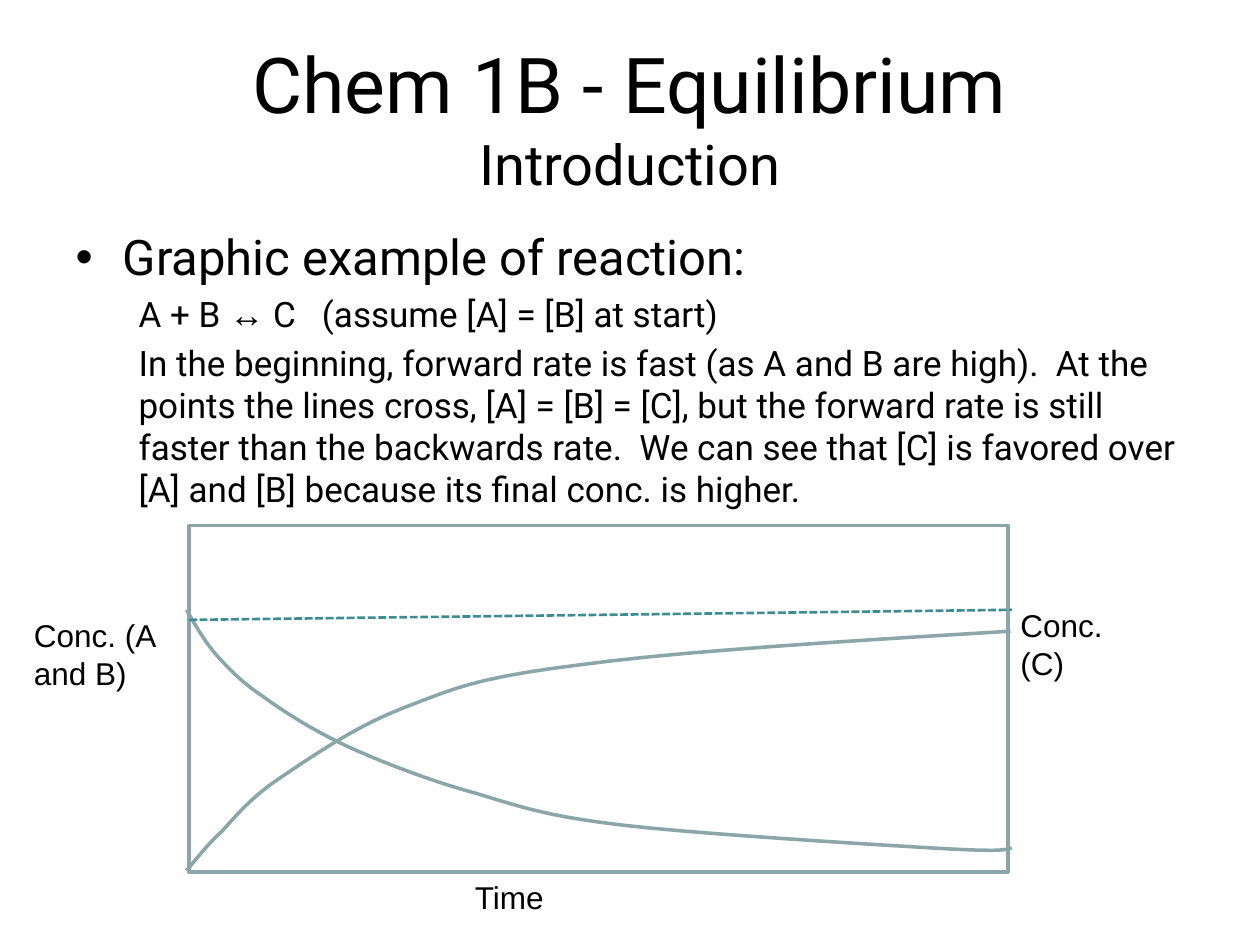
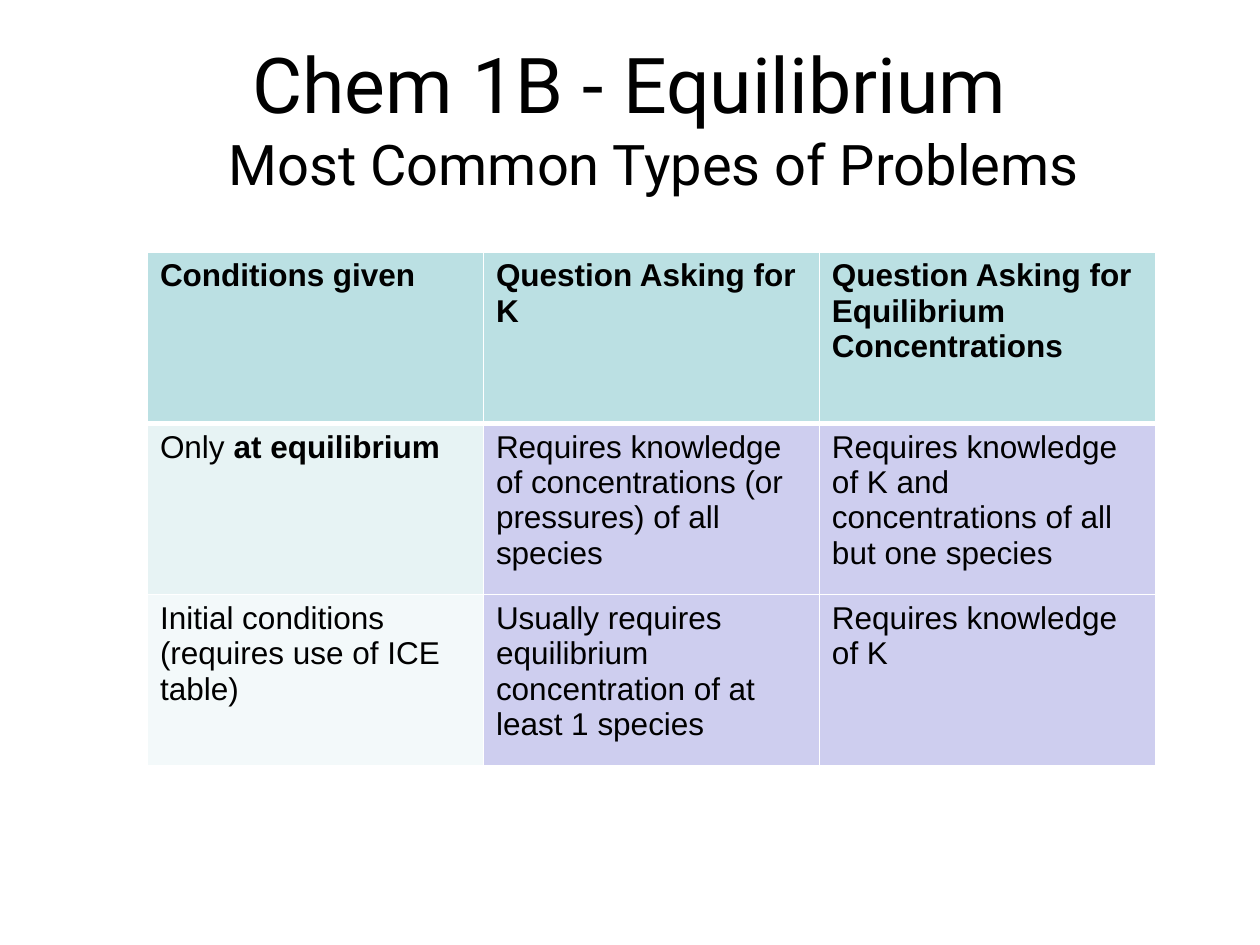
import itertools

import pptx
import pptx.dml.color
import pptx.enum.dml
import pptx.enum.shapes
import pptx.enum.text
import pptx.oxml.ns
import pptx.util
from lxml import etree
from pptx.util import Inches

qn = pptx.oxml.ns.qn


def color(code):
    return pptx.dml.color.RGBColor.from_string(code)


def box(*sides):
    return [Inches(side) for side in sides]


def blend(start, first, second, end, steps=10):
    """Points along one cubic curve, without its start."""
    for step in range(1, steps + 1):
        t = step / steps
        parts = ((1 - t) ** 3, 3 * t * (1 - t) ** 2, 3 * t * t * (1 - t), t ** 3)
        yield tuple(sum(part * point[axis] for part, point in
                        zip(parts, (start, first, second, end))) for axis in (0, 1))


class Deck:
    HEAD, TEXT = "Roboto", "Arial"
    INK, CURVE, LIMIT, WHITE = "000000", "8AA6A8", "3C8C93", "FFFFFF"

    def __init__(self):
        self.file = pptx.Presentation()
        self.file.slide_width, self.file.slide_height = box(10, 7.5)
        self.slide = None

    def font(self, run, size, name, bold=None):
        run.font.size = pptx.util.Pt(size)
        run.font.name = name
        run.font.bold = bold
        run.font.color.rgb = color(self.INK)

    def place(self, shape, *sides):
        shape.left, shape.top, shape.width, shape.height = box(*sides)
        frame = shape.text_frame
        frame.word_wrap = True
        frame.auto_size = pptx.enum.text.MSO_AUTO_SIZE.NONE
        return frame

    def indent(self, para, left, first):
        props = para._p.get_or_add_pPr()
        props.set("marL", str(Inches(left)))
        props.set("indent", str(Inches(first)))
        return props

    def page(self, topic, layout, hang=False):
        self.slide = self.file.slides.add_slide(self.file.slide_layouts[layout])
        frame = self.place(self.slide.shapes.title, 0.5, 0.3, 9, 1.25)
        frame.vertical_anchor = pptx.enum.text.MSO_ANCHOR.MIDDLE
        frame.text = "Chem 1B - Equilibrium\v" + topic
        para = frame.paragraphs[0]
        para.alignment = pptx.enum.text.PP_ALIGN.CENTER
        for run, size in zip(para.runs, (44, 32)):
            self.font(run, size, self.HEAD)
        if hang:
            self.indent(para, 0.38, -0.38)

    def body(self, head, notes, *sides):
        frame = self.place(self.slide.placeholders[1], *sides)
        frame.text = head
        self.font(frame.paragraphs[0].runs[0], 28, self.HEAD)
        for note in notes:
            para = frame.add_paragraph()
            para.level = 1
            etree.SubElement(self.indent(para, 0.5, 0), qn("a:buNone"))
            for text, name in note:
                run = para.add_run()
                run.text = text
                self.font(run, 20, name)

    def label(self, text, *sides):
        frame = self.place(self.slide.shapes.add_textbox(*box(*sides)), *sides)
        frame.text = text
        self.font(frame.paragraphs[0].runs[0], 18, self.TEXT)

    def trace(self, shape):
        shape.shadow.inherit = False
        shape.fill.background()
        shape.line.color.rgb = color(self.CURVE)
        shape.line.width = pptx.util.Pt(2)

    def frame(self, *sides):
        kind = pptx.enum.shapes.MSO_SHAPE.RECTANGLE
        self.trace(self.slide.shapes.add_shape(kind, *box(*sides)))

    def curve(self, knots):
        """Knots hold a start, then two handles and an end for each piece."""
        points = itertools.chain.from_iterable(
            blend(*knots[i:i + 4]) for i in range(0, len(knots) - 1, 3))
        build = self.slide.shapes.build_freeform(*box(*knots[0]))
        build.add_line_segments([box(*point) for point in points], close=False)
        self.trace(build.convert_to_shape())

    def dashes(self, *ends):
        kind = pptx.enum.shapes.MSO_CONNECTOR.STRAIGHT
        line = self.slide.shapes.add_connector(kind, *box(*ends))
        line.line.color.rgb = color(self.LIMIT)
        line.line.width = pptx.util.Pt(1.5)
        line.line.dash_style = pptx.enum.dml.MSO_LINE.SQUARE_DOT
        etree.SubElement(line._element.spPr, qn("a:effectLst"))

    def border(self, cell, head, below):
        props = cell._tc.get_or_add_tcPr()
        widths = {"L": 1, "R": 1, "T": 3 if below else 1, "B": 3 if head else 1}
        for side, width in widths.items():
            line = etree.SubElement(props, qn("a:ln" + side), w=str(pptx.util.Pt(width)))
            fill = etree.SubElement(line, qn("a:solidFill"))
            etree.SubElement(fill, qn("a:srgbClr"), val=self.WHITE)

    def table(self, rows, fills, *sides):
        grid = self.slide.shapes.add_table(len(rows), len(rows[0]), *box(*sides)).table
        for r, row in enumerate(rows):
            for c, parts in enumerate(row):
                cell = grid.cell(r, c)
                self.border(cell, r == 0, r == 1)
                cell.fill.solid()
                cell.fill.fore_color.rgb = color(fills[r][c])
                # Every second part of a cell is bold, as is the whole head row
                for i, text in enumerate(parts.split("|")):
                    run = cell.text_frame.paragraphs[0].add_run()
                    run.text = text
                    self.font(run, 18, self.TEXT, r == 0 or i % 2 == 1)


def main():
    deck = Deck()

    # Slide 1: rates and a graph of the reaction
    deck.page("Introduction", 1)
    deck.body("Graphic example of reaction:", [
        [("A + B ", deck.HEAD), ("↔", "Times New Roman"),
         (" C   (assume [A] = [B] at start)", deck.HEAD)],
        [("In the beginning, forward rate is fast (as A and B are high).  At the "
          "points the lines cross, [A] = [B] = [C], but the forward rate is still "
          "faster than the backwards rate.  We can see that [C] is favored over "
          "[A] and [B] because its final conc. is higher.", deck.HEAD)],
    ], 0.5, 1.75, 9, 2.11)
    deck.frame(1.5, 4.17, 6.5, 2.75)
    deck.label("Conc. (A and B)", 0.17, 4.84, 1.25, 0.71)
    deck.label("Conc. (C)", 8, 4.76, 1.08, 0.71)
    deck.label("Time", 3.67, 6.92, 1.25, 0.4)

    # Falling A and B, rising C, and the limit
    deck.curve([(1.48, 4.84), (1.55, 4.96), (1.61, 5.07), (1.71, 5.19),
                (1.81, 5.3), (1.91, 5.41), (2.09, 5.53),
                (2.27, 5.66), (2.49, 5.8), (2.77, 5.93),
                (3.06, 6.06), (3.42, 6.2), (3.79, 6.3),
                (4.15, 6.41), (4.35, 6.48), (4.95, 6.55),
                (5.55, 6.62), (6.88, 6.7), (7.39, 6.73),
                (7.91, 6.76), (7.97, 6.75), (8.03, 6.73)])
    deck.curve([(1.48, 6.91), (1.56, 6.82), (1.63, 6.72), (1.76, 6.6),
                (1.88, 6.47), (1.99, 6.33), (2.23, 6.17),
                (2.47, 6.01), (2.81, 5.77), (3.2, 5.62),
                (3.59, 5.47), (3.77, 5.38), (4.58, 5.28),
                (5.38, 5.17), (6.7, 5.09), (8.02, 5.01)])
    deck.dashes(1.5, 4.92, 8.03, 4.84)

    # Slide 2: table of problem types
    deck.page("Most Common Types of Problems", 5, hang=True)
    deck.table([
        ["Conditions given", "Question Asking for K",
         "Question Asking for Equilibrium Concentrations"],
        ["Only |at equilibrium",
         "Requires knowledge of concentrations (or pressures) of all species",
         "Requires knowledge of K and concentrations of all but one species"],
        ["Initial conditions (requires use of ICE table)",
         "Usually requires equilibrium concentration of at least 1 species",
         "Requires knowledge of K"],
    ], [["BBE0E3"] * 3, ["E7F3F4"] + ["CECEEF"] * 2, ["F3F9FA"] + ["CECEEF"] * 2],
        1.17, 2, 8, 4.08)

    deck.file.save("out.pptx")


if __name__ == "__main__":
    main()
